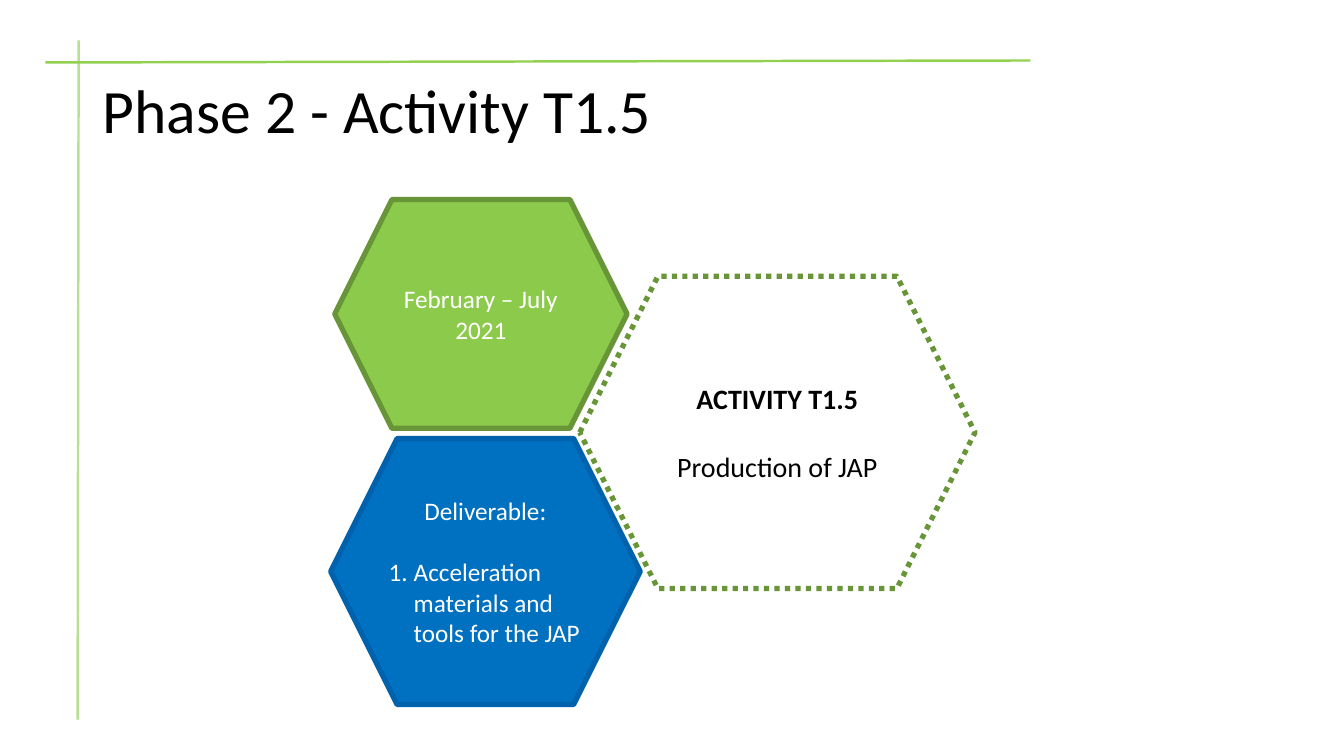
"""Build the Phase 2 - Activity T1.5 slide with its three hexagons."""
from lxml.etree import SubElement
from pptx import Presentation
from pptx.dml.color import RGBColor
from pptx.enum.dml import MSO_LINE
from pptx.enum.shapes import MSO_CONNECTOR, MSO_SHAPE
from pptx.enum.text import MSO_ANCHOR, PP_ALIGN
from pptx.oxml.ns import qn
from pptx.util import Inches, Pt

FONT = "Calibri"
COLORS = {
    "black": "000000", "white": "FFFFFF", "green": "8BCA4B", "dark green": "679537",
    "blue": "0070C0", "dark blue": "0062AC", "pale rule": "B9DF93", "rule": "92D050",
}
TITLE = "Phase 2 - Activity T1.5"
RULES = [
    ((0.78, 0.4), (0.77, 7.14), "pale rule"),
    ((0.45, 0.62), (10.22, 0.6), "rule"),
]
HEXAGONS = [
    {"box": (5.75, 2.74, 3.92, 3.1), "fill": None, "line": "dark green", "text": "black",
     "size": 20, "paragraphs": [("ACTIVITY T1.5", "bold"), ("Production of JAP", "plain")]},
    {"box": (3.32, 1.98, 2.9, 2.27), "fill": "green", "line": "dark green", "text": "white",
     "size": 18, "paragraphs": [("February – July 2021", "plain")]},
    {"box": (3.28, 4.35, 3.07, 2.64), "fill": "blue", "line": "dark blue", "text": "white",
     "size": 18, "paragraphs": [("Deliverable:", "plain"),
                                ("Acceleration materials and tools for the JAP", "numbered")]},
]


def color(name):
    return RGBColor.from_string(COLORS[name])


def set_font(paragraph, size, color_name, bold=False):
    for run in paragraph.runs:
        run.font.name = FONT
        run.font.size = Pt(size)
        run.font.bold = bold
        run.font.color.rgb = color(color_name)


def add_numbering(paragraph):
    properties = paragraph._p.get_or_add_pPr()
    properties.set("marL", str(Inches(0.25)))
    properties.set("indent", str(Inches(-0.25)))
    SubElement(properties, qn("a:buFont"), typeface="+mj-lt")
    SubElement(properties, qn("a:buAutoNum"), type="arabicPeriod")


def add_rule(slide, start, end, color_name):
    points = [Inches(value) for value in start + end]
    rule = slide.shapes.add_connector(MSO_CONNECTOR.STRAIGHT, *points)
    rule.line.color.rgb = color(color_name)
    rule.line.width = Pt(1.75)
    SubElement(rule._element.spPr, qn("a:effectLst"))


def add_hexagon(slide, content):
    box = [Inches(value) for value in content["box"]]
    shape = slide.shapes.add_shape(MSO_SHAPE.HEXAGON, *box)
    shape.shadow.inherit = False
    shape.line.color.rgb = color(content["line"])
    shape.line.width = Pt(3.75)
    if content["fill"]:
        shape.fill.solid()
        shape.fill.fore_color.rgb = color(content["fill"])
    else:
        shape.fill.background()
        shape.line.dash_style = MSO_LINE.ROUND_DOT
    text_frame = shape.text_frame
    text_frame.word_wrap = True
    text_frame.vertical_anchor = MSO_ANCHOR.MIDDLE
    text_frame.text = "\n".join(text for text, style in content["paragraphs"])
    for index, paragraph in enumerate(text_frame.paragraphs):
        style = content["paragraphs"][index][1]
        paragraph.alignment = PP_ALIGN.LEFT if style == "numbered" else PP_ALIGN.CENTER
        if index:
            paragraph.space_before = Pt(content["size"] * 1.22)
        if style == "numbered":
            add_numbering(paragraph)
        set_font(paragraph, content["size"], content["text"], style == "bold")


def main():
    presentation = Presentation()
    presentation.slide_width = Inches(13.33)
    presentation.slide_height = Inches(7.5)
    slide = presentation.slides.add_slide(presentation.slide_layouts[5])

    title = slide.shapes.title
    title.left, title.top = Inches(0.92), Inches(0.4)
    title.width, title.height = Inches(11.5), Inches(1.45)
    title.text_frame.text = TITLE
    title.text_frame.vertical_anchor = MSO_ANCHOR.MIDDLE
    paragraph = title.text_frame.paragraphs[0]
    paragraph.alignment = PP_ALIGN.LEFT
    paragraph.line_spacing = 0.9
    set_font(paragraph, 44, "black")

    for start, end, color_name in RULES:
        add_rule(slide, start, end, color_name)
    for content in HEXAGONS:
        add_hexagon(slide, content)
    presentation.save("out.pptx")


if __name__ == "__main__":
    main()
